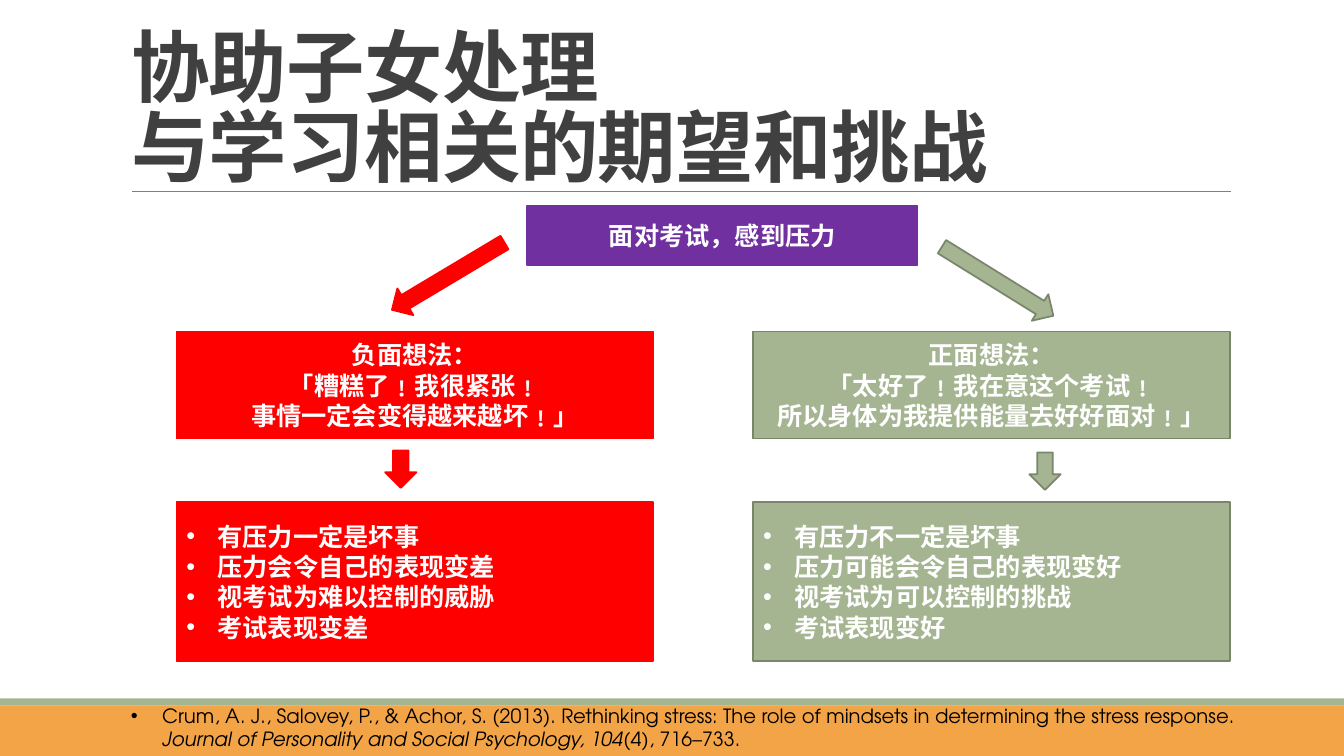
from lxml import etree
from pptx import Presentation
from pptx.dml.color import RGBColor
from pptx.enum.shapes import MSO_CONNECTOR, MSO_SHAPE
from pptx.enum.text import MSO_ANCHOR, MSO_AUTO_SIZE, PP_ALIGN
from pptx.oxml.ns import qn
from pptx.util import Inches, Pt

RECTANGLE, DOWN_ARROW = MSO_SHAPE.RECTANGLE, MSO_SHAPE.DOWN_ARROW
STRAIGHT = MSO_CONNECTOR.STRAIGHT
MIDDLE, BOTTOM = MSO_ANCHOR.MIDDLE, MSO_ANCHOR.BOTTOM
LEFT, CENTER = PP_ALIGN.LEFT, PP_ALIGN.CENTER
NO_AUTOFIT = MSO_AUTO_SIZE.NONE

WHITE = RGBColor(0xFF, 0xFF, 0xFF)
BLACK = RGBColor(0x00, 0x00, 0x00)
CHARCOAL = RGBColor(0x40, 0x40, 0x40)
GRAY = RGBColor(0x80, 0x80, 0x80)
ORANGE = RGBColor(0xF3, 0xA4, 0x47)
PURPLE = RGBColor(0x70, 0x30, 0xA0)
RED = RGBColor(0xFF, 0x00, 0x00)
SAGE = RGBColor(0xA5, 0xB5, 0x92)
DARK_SAGE = RGBColor(0x7A, 0x86, 0x6C)

CHINESE_FONT = "Noto Sans CJK SC"
LATIN_FONT = "TeX Gyre Adventor"

deck = Presentation()
deck.slide_width, deck.slide_height = Inches(13.33), Inches(7.5)
page = deck.slides.add_slide(deck.slide_layouts[5])


def add_span(para, text, size, color, font=CHINESE_FONT, bold=True):
    span = para.add_run()
    span.text = text
    span.font.size = Pt(size)
    span.font.bold = bold
    span.font.color.rgb = color
    span.font.name = font
    etree.SubElement(span.font._element, qn("a:ea"), typeface=font)
    return span


def add_block(kind, place, fill, line=None, lines=(), bulleted=False):
    block = page.shapes.add_shape(kind, *[Inches(length) for length in place])
    block.shadow.inherit = False
    block.fill.solid()
    block.fill.fore_color.rgb = fill
    if line is None:
        block.line.fill.background()
    else:
        block.line.color.rgb = line
        block.line.width = Pt(1.25)
    frame = block.text_frame
    frame.word_wrap = True
    frame.vertical_anchor = MIDDLE
    for index, text in enumerate(lines):
        para = frame.add_paragraph() if index else frame.paragraphs[0]
        para.alignment = LEFT if bulleted else CENTER
        add_span(para, text, 18, WHITE)
        if bulleted:
            bullet_paras.append(para)
    return block


bullet_paras = []

# Footer bands and the rule under the title
add_block(RECTANGLE, (0, 7, 13.33, 0.5), ORANGE)
add_block(RECTANGLE, (0, 6.93, 13.33, 0.07), SAGE)
rule = page.shapes.add_connector(STRAIGHT, Inches(1.31), Inches(1.9), Inches(12.21), Inches(1.9))
rule.line.color.rgb = GRAY
rule.line.width = Pt(0.5)
etree.SubElement(rule._element.spPr, qn("a:effectLst"))

# Title
title = page.shapes.title
title.left, title.top = Inches(1.2), Inches(0.64)
title.width, title.height = Inches(11), Inches(1.32)
title.text_frame.word_wrap = True
title.text_frame.auto_size = NO_AUTOFIT
title.text_frame.vertical_anchor = BOTTOM
title_para = title.text_frame.paragraphs[0]
title_para.alignment = LEFT
title_para.line_spacing = 0.85
for index, text in enumerate(("协助子女处理", "与学习相关的期望和挑战")):
    if index:
        title_para.add_line_break()
    span = add_span(title_para, text, 56, CHARCOAL)
    span.font._element.set("spc", "-50")

# Reference
reference = page.shapes.add_textbox(Inches(1.2), Inches(6.93), Inches(11.44), Inches(0.57))
reference.text_frame.word_wrap = True
reference_para = reference.text_frame.paragraphs[0]
for text, italic in (
    ("Crum, A. J., Salovey, P., & Achor, S. (2013). Rethinking stress: "
     "The role of mindsets in determining the stress response. ", False),
    ("Journal of Personality and Social Psychology, 104", True),
    ("(4), 716–733.", False),
):
    span = add_span(reference_para, text, 14, BLACK, LATIN_FONT, bold=False)
    span.font.italic = italic
bullet_paras.append(reference_para)

# Starting situation
add_block(RECTANGLE, (5.23, 2.04, 3.87, 0.59), PURPLE, PURPLE, ["面对考试，感到压力"])

# Negative and positive branches: box left, colours, arrows, thoughts, outcomes
branches = [
    (1.75, RED, RED, (4.29, 2.09), 59.1, (3.82, 4.47),
     ["负面想法：", "「糟糕了﹗我很紧张﹗", "事情一定会变得越来越坏﹗」"],
     ["有压力一定是坏事", "压力会令自己的表现变差", "视考试为难以控制的威胁", "考试表现变差"]),
    (7.47, SAGE, DARK_SAGE, (9.74, 2.14), 301.8, (10.21, 4.49),
     ["正面想法：", "「太好了﹗我在意这个考试﹗", "所以身体为我提供能量去好好面对﹗」"],
     ["有压力不一定是坏事", "压力可能会令自己的表现变好", "视考试为可以控制的挑战", "考试表现变好"]),
]
for left, fill, line, long_arrow, angle, short_arrow, thoughts, outcomes in branches:
    add_block(RECTANGLE, (left, 3.29, 4.73, 1.06), fill, line, thoughts)
    add_block(RECTANGLE, (left, 4.98, 4.73, 1.58), fill, line, outcomes, bulleted=True)
    add_block(DOWN_ARROW, (*long_arrow, 0.31, 1.3), fill, line).rotation = angle
    add_block(DOWN_ARROW, (*short_arrow, 0.31, 0.37), fill, line)

# Bullets with hanging indents
for para in bullet_paras:
    properties = para._p.get_or_add_pPr()
    properties.set("marL", str(Inches(0.31)))
    properties.set("indent", str(Inches(-0.31)))
    etree.SubElement(properties, qn("a:buFont"), typeface="Arial")
    etree.SubElement(properties, qn("a:buChar"), char="•")

deck.save("out.pptx")
